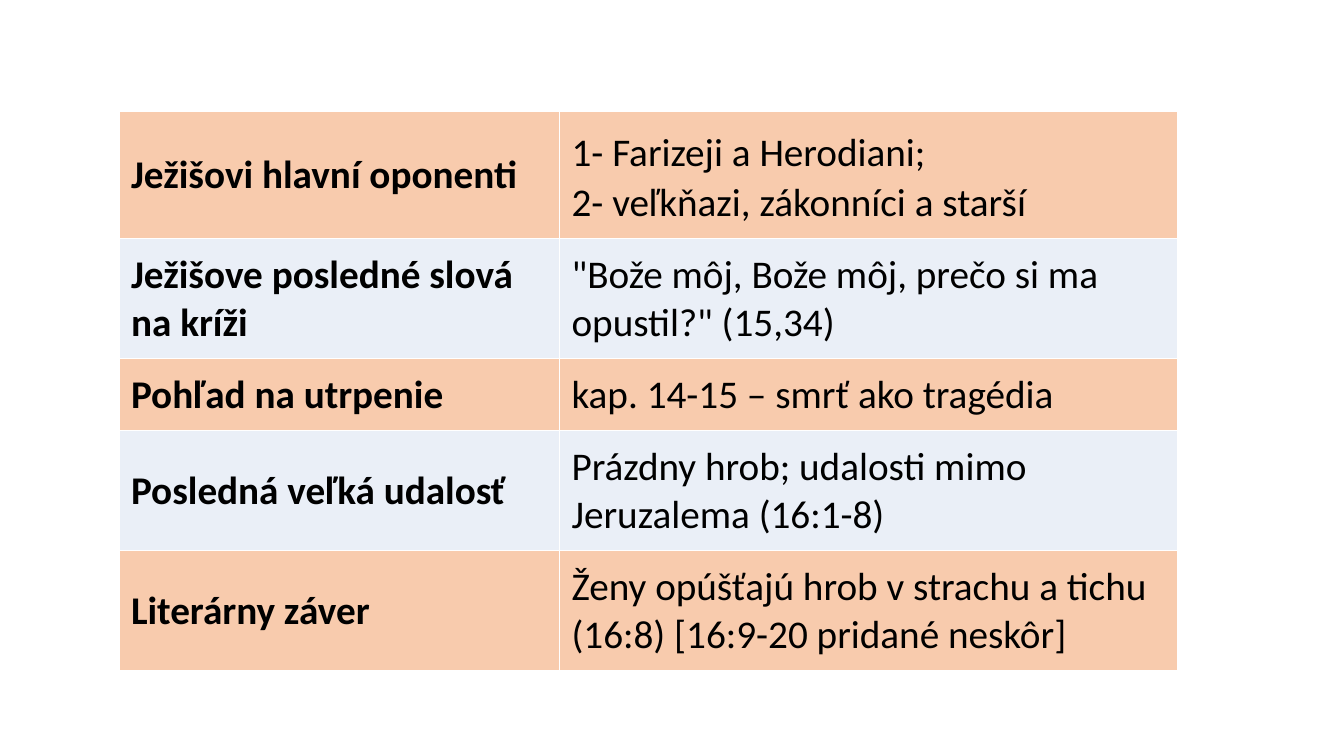
from dataclasses import dataclass

from lxml import etree
from pptx import Presentation
from pptx.dml.color import RGBColor
from pptx.enum.text import MSO_ANCHOR
from pptx.oxml.ns import qn
from pptx.util import Inches, Pt

MIDDLE = MSO_ANCHOR.MIDDLE
BORDER_SIDES = ("a:lnL", "a:lnR", "a:lnT", "a:lnB")


@dataclass(frozen=True)
class Theme:
    font: str = "Calibri"
    text: str = "000000"
    border: str = "FFFFFF"
    bands: tuple = ("F8CBAD", "EAEFF7")
    body_size: int = 28
    gap_size: int = 32
    border_width: float = 1
    cell_margin: float = 0.12


# Each row: topic, lines of the answer, row height
GOSPEL_ROWS = [
    ("Ježišovi hlavní oponenti",
     ["1- Farizeji a Herodiani;", "2- veľkňazi, zákonníci a starší"], 1.25),
    ("Ježišove posledné slová na kríži",
     ['"Bože môj, Bože môj, prečo si ma opustil?" (15,34)'], 1.19),
    ("Pohľad na utrpenie", ["kap. 14-15 – smrť ako tragédia"], 0.71),
    ("Posledná veľká udalosť",
     ["Prázdny hrob; udalosti mimo Jeruzalema (16:1-8)"], 1.19),
    ("Literárny záver",
     ["Ženy opúšťajú hrob v strachu a tichu (16:8) [16:9-20 pridané neskôr]"], 1.19),
]
COLUMN_WIDTHS = (4.37, 6.13)


class SlideBuilder:
    def __init__(self, slide, theme):
        self.slide = slide
        self.theme = theme

    def run(self, paragraph, text, size, bold):
        run = paragraph.add_run()
        run.text = text
        style = {"name": self.theme.font, "size": Pt(size), "bold": bold}
        for attribute, value in style.items():
            setattr(run.font, attribute, value)
        run.font.color.rgb = RGBColor.from_string(self.theme.text)

    def borders(self, cell):
        properties = cell._tc.get_or_add_tcPr()
        for position, side in enumerate(BORDER_SIDES):
            line = etree.Element(qn(side), w=str(Pt(self.theme.border_width)))
            fill = etree.SubElement(line, qn("a:solidFill"))
            etree.SubElement(fill, qn("a:srgbClr"), val=self.theme.border)
            properties.insert(position, line)

    def cell(self, cell, lines, color, bold):
        margin = Inches(self.theme.cell_margin)
        layout = {"margin_left": margin, "margin_right": margin, "margin_top": margin,
                  "margin_bottom": margin, "vertical_anchor": MIDDLE}
        for attribute, value in layout.items():
            setattr(cell, attribute, value)
        cell.fill.solid()
        cell.fill.fore_color.rgb = RGBColor.from_string(color)
        self.borders(cell)
        paragraph = cell.text_frame.paragraphs[0]
        for index, line in enumerate(lines):
            if index:
                # A larger space opens up the line before the break
                self.run(paragraph, " ", self.theme.gap_size, bold)
                paragraph.add_line_break()
            self.run(paragraph, line, self.theme.body_size, bold)

    def table(self, left, top, widths, rows):
        height = sum(row_height for _, _, row_height in rows)
        table = self.slide.shapes.add_table(
            len(rows), len(widths), Inches(left), Inches(top),
            Inches(sum(widths)), Inches(height)).table
        table.first_row = table.horz_banding = False
        for column, width in zip(table.columns, widths):
            column.width = Inches(width)
        for index, (topic, answer, row_height) in enumerate(rows):
            table.rows[index].height = Inches(row_height)
            color = self.theme.bands[index % len(self.theme.bands)]
            self.cell(table.cell(index, 0), [topic], color, bold=True)
            self.cell(table.cell(index, 1), answer, color, bold=False)


def main():
    presentation = Presentation()
    presentation.slide_width = Inches(13.33)
    presentation.slide_height = Inches(7.5)
    slide = presentation.slides.add_slide(presentation.slide_layouts[6])

    # Overview of the Passion narrative
    SlideBuilder(slide, Theme()).table(1.18, 1.11, COLUMN_WIDTHS, GOSPEL_ROWS)
    presentation.save("out.pptx")


if __name__ == "__main__":
    main()
